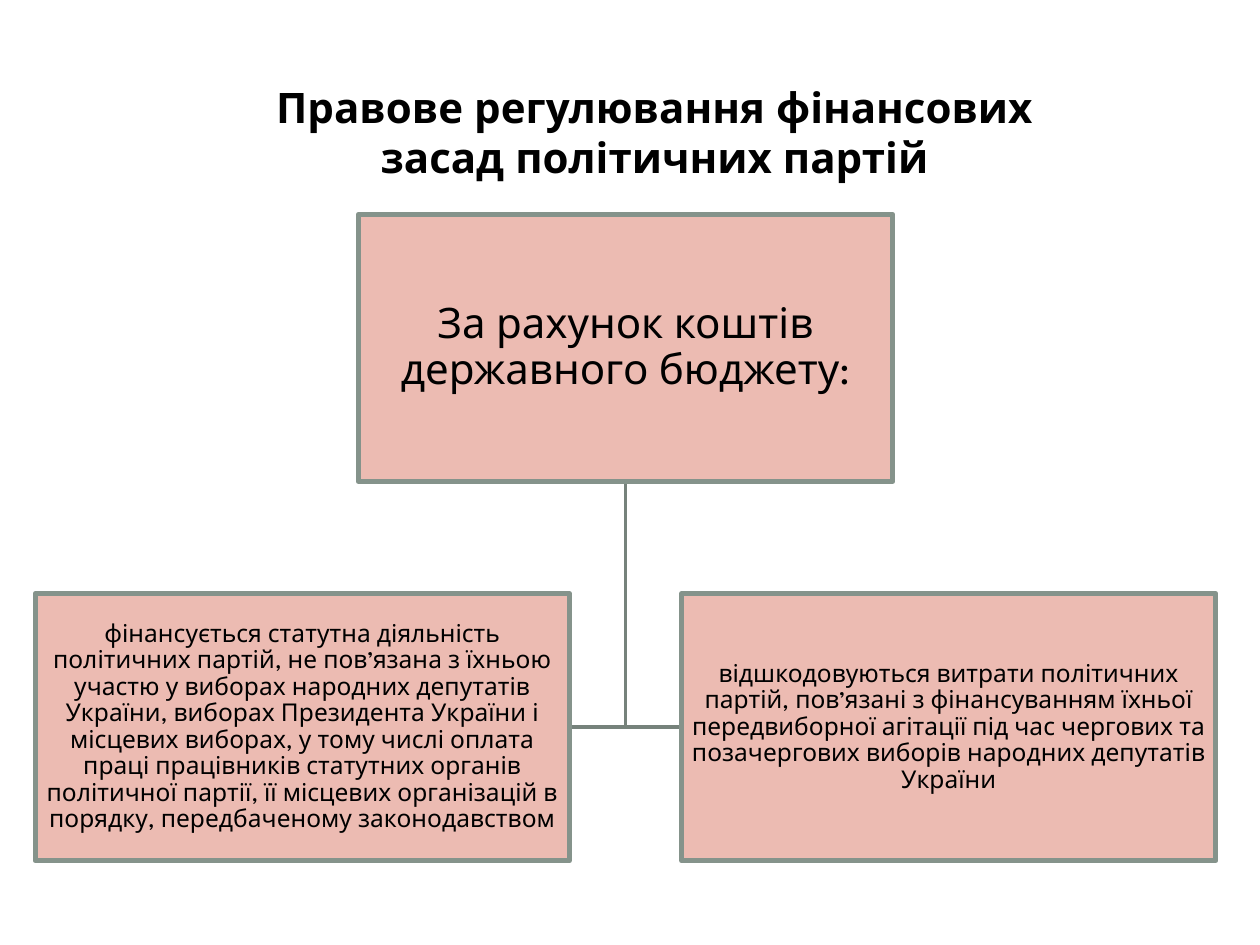
from dataclasses import dataclass

from pptx import Presentation
from pptx.dml.color import RGBColor
from pptx.enum.shapes import MSO_SHAPE
from pptx.enum.text import MSO_ANCHOR, PP_ALIGN
from pptx.util import Cm, Pt

RECTANGLE = MSO_SHAPE.RECTANGLE
CENTER = PP_ALIGN.CENTER
TOP, MIDDLE = MSO_ANCHOR.TOP, MSO_ANCHOR.MIDDLE


@dataclass(frozen=True)
class Theme:
    font: str = "League Spartan"
    ink: RGBColor = RGBColor(0x00, 0x00, 0x00)
    paper: RGBColor = RGBColor(0xFF, 0xFF, 0xFF)
    node_fill: RGBColor = RGBColor(0xEC, 0xBB, 0xB2)
    node_line: RGBColor = RGBColor(0x85, 0x93, 0x8B)
    branch_line: RGBColor = RGBColor(0x76, 0x82, 0x7B)
    large: int = 24
    small: int = 14


THEME = Theme()

TITLE = "Правове регулювання фінансових засад політичних партій"
ROOT = "За рахунок коштів державного бюджету:"
CHILDREN = (
    "фінансується статутна діяльність політичних партій, не пов’язана з їхньою "
    "участю у виборах народних депутатів України, виборах Президента України і "
    "місцевих виборах, у тому числі оплата праці працівників статутних органів "
    "політичної партії, її місцевих організацій в порядку, передбаченому "
    "законодавством",
    "відшкодовуються витрати політичних партій, пов’язані з фінансуванням їхньої "
    "передвиборної агітації під час чергових та позачергових виборів народних "
    "депутатів України",
)


def write_text(shape, text, *, size, bold=False, anchor=MIDDLE, inset=None, spacing=None):
    frame = shape.text_frame
    frame.word_wrap = True
    frame.vertical_anchor = anchor
    if inset is not None:
        frame.margin_left = frame.margin_right = inset
        frame.margin_top = frame.margin_bottom = inset
    para = frame.paragraphs[0]
    para.alignment = CENTER
    para.line_spacing = spacing
    span = para.add_run()
    span.text = text
    span.font.name = THEME.font
    span.font.size = Pt(size)
    span.font.bold = bold
    span.font.color.rgb = THEME.ink


def add_rectangle(page, left, top, width, height, fill, line=None):
    shape = page.shapes.add_shape(RECTANGLE, left, top, width, height)
    shape.shadow.inherit = False
    shape.fill.solid()
    shape.fill.fore_color.rgb = fill
    if line is None:
        shape.line.fill.background()
    else:
        shape.line.color.rgb = line
        shape.line.width = Pt(3)
    return shape


def add_title(page, left, top, width, height):
    shape = add_rectangle(page, left, top, width, height, THEME.paper)
    write_text(shape, TITLE, size=THEME.large, bold=True, anchor=TOP)


def add_branch(page, start, end):
    """Draw an open elbow that goes down from start, then sideways to end."""
    builder = page.shapes.build_freeform(*start)
    builder.add_line_segments([(start[0], end[1]), end], close=False)
    branch = builder.convert_to_shape()
    branch.shadow.inherit = False
    branch.fill.background()
    branch.line.color.rgb = THEME.branch_line
    branch.line.width = Pt(2)


def add_node(page, left, top, width, height, text, size, inset):
    shape = add_rectangle(page, left, top, width, height,
                          THEME.node_fill, THEME.node_line)
    write_text(shape, text, size=size, inset=inset, spacing=0.9)


def add_hierarchy(page, left, top, width):
    """Place a root over two children; gaps are 21% of a node's width."""
    node_width = int(width / 2.21)
    node_height = node_width // 2
    gap = width - 2 * node_width
    center = left + width // 2
    child_top = top + node_height + gap
    child_middle = child_top + node_height // 2

    for side in (1, -1):
        add_branch(page, (center, top + node_height),
                   (center + side * gap // 2, child_middle))
    add_node(page, center - node_width // 2, top, node_width, node_height,
             ROOT, THEME.large, Cm(0.05))
    for index, text in enumerate(CHILDREN):
        add_node(page, left + index * (node_width + gap), child_top,
                 node_width, node_height, text, THEME.small, Cm(0.03))


def main():
    deck = Presentation()
    deck.slide_width, deck.slide_height = Cm(25.4), Cm(19.05)
    page = deck.slides.add_slide(deck.slide_layouts[6])
    add_hierarchy(page, Cm(0.71), Cm(4.32), Cm(23.8))
    add_title(page, Cm(4.09), Cm(1.52), Cm(18.21), Cm(2.31))
    deck.save("out.pptx")


if __name__ == "__main__":
    main()
